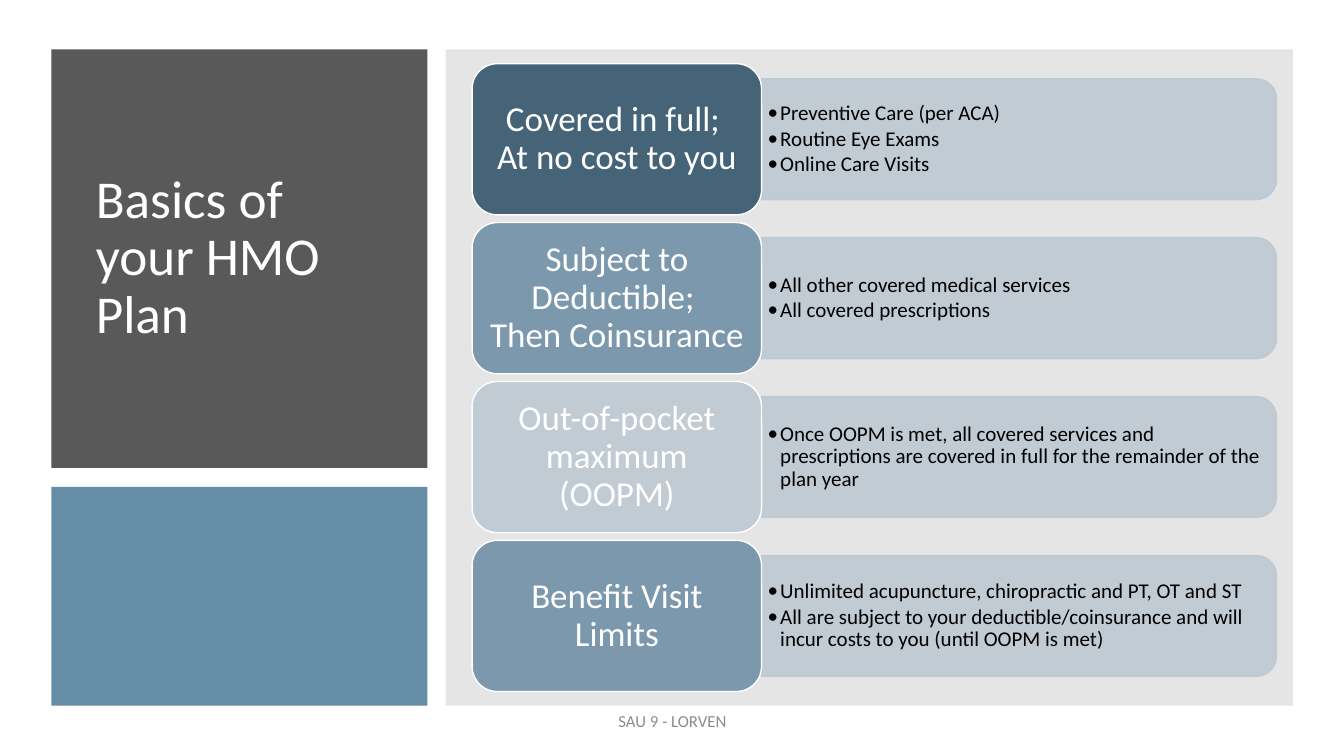
from lxml import etree
from pptx import Presentation
from pptx.dml.color import RGBColor
from pptx.enum.shapes import MSO_SHAPE
from pptx.enum.text import MSO_ANCHOR, PP_ALIGN
from pptx.oxml.ns import qn
from pptx.util import Pt

RECT = MSO_SHAPE.RECTANGLE
ROUND = MSO_SHAPE.ROUNDED_RECTANGLE
TAB = MSO_SHAPE.ROUND_2_SAME_RECTANGLE
MIDDLE = MSO_ANCHOR.MIDDLE
LEFT, CENTER = PP_ALIGN.LEFT, PP_ALIGN.CENTER
FONT = "Calibri"
WHITE, BLACK, BAR = "FFFFFF", "000000", "BDC9D2"

ROWS = [
    ("456477", ["Covered in full; ", "At no cost to you"],
     ["Preventive Care (per ACA)", "Routine Eye Exams", "Online Care Visits"]),
    ("7C98AC", ["Subject to Deductible; ", "Then Coinsurance"],
     ["All other covered medical services", "All covered prescriptions"]),
    ("C1CBD4", ["Out-of-pocket maximum", "(OOPM)"],
     ["Once OOPM is met, all covered services and prescriptions are covered "
      "in full for the remainder of the plan year"]),
    ("7C98AC", ["Benefit Visit Limits"],
     ["Unlimited acupuncture, chiropractic and PT, OT and ST",
      "All are subject to your deductible/coinsurance and will incur costs "
      "to you (until OOPM is met)"]),
]


def color(code):
    return RGBColor.from_string(code)


def add_box(slide, kind, box, fill, line=None, alpha=100):
    """Add a flat shape; alpha is the opacity of fill and line in percent."""
    shape = slide.shapes.add_shape(kind, *map(Pt, box))
    shape.shadow.inherit = False
    shape.fill.solid()
    shape.fill.fore_color.rgb = color(fill)
    if line:
        shape.line.color.rgb = color(line)
        shape.line.width = Pt(1)
    else:
        shape.line.fill.background()
    if alpha < 100:
        for tint in shape._element.spPr.iter(qn("a:srgbClr")):
            etree.SubElement(tint, qn("a:alpha"), val=str(alpha * 1000))
    return shape


def set_frame(shape, side=7.2, edge=3.6):
    frame = shape.text_frame
    frame.word_wrap = True
    frame.vertical_anchor = MIDDLE
    frame.margin_left = frame.margin_right = Pt(side)
    frame.margin_top = frame.margin_bottom = Pt(edge)
    return frame


def add_text(para, lines, size, ink, align=LEFT, space=0.9):
    """Fill a paragraph with one run per line, parted by line breaks."""
    para.alignment = align
    para.line_spacing = space
    for i, line in enumerate(lines):
        if i:
            para.add_line_break()
        run = para.add_run()
        run.text = line
        run.font.name = FONT
        run.font.size = Pt(size)
        run.font.color.rgb = color(ink)


def add_note(slide, box, text, size, ink, align, space):
    frame = set_frame(slide.shapes.add_textbox(*map(Pt, box)))
    add_text(frame.paragraphs[0], [text], size, ink, align, space)


def add_list(slide, box, items):
    frame = set_frame(slide.shapes.add_textbox(*map(Pt, box)), 4.3, 2.2)
    for i, item in enumerate(items):
        para = frame.add_paragraph() if i else frame.paragraphs[0]
        add_text(para, [item], 15, BLACK)
        para.space_after = Pt(2)
        props = para._p.get_or_add_pPr()
        props.set("marL", str(Pt(9)))
        props.set("indent", str(-Pt(9)))
        etree.SubElement(props, qn("a:buFont"), typeface=FONT)
        etree.SubElement(props, qn("a:buChar"), char="•")


def add_row(slide, box, fill, title, items):
    """Place a label on the left and its rounded bar with bullets beside it."""
    left, top, width, height = box
    label = 206.8
    long, thick = width - label, height * 0.8
    mid_x, mid_y = left + label + long / 2, top + height / 2
    bar = add_box(slide, TAB, (mid_x - thick / 2, mid_y - long / 2, thick, long),
                  BAR, BAR, 90)
    bar.rotation = 90
    add_list(slide, (left + label, mid_y - 39, long - 4.2, 78), items)
    card = add_box(slide, ROUND, (left, top, label, height), fill, WHITE)
    add_text(set_frame(card).paragraphs[0], title, 25, WHITE, CENTER)


def add_side(slide, box):
    left, top, width, height = box
    head, foot = 299, 156.2
    add_box(slide, RECT, (left, top, width, head), "595959")
    add_note(slide, (left + 24.7, top + 22.5, 224, 254),
             "Basics of your HMO Plan", 38, WHITE, LEFT, 0.9)
    add_box(slide, RECT, (left, top + height - foot, width, foot),
            "5D87A1", alpha=95)


def add_panel(slide, box):
    left, top, width, height = box
    add_box(slide, RECT, box, "808080", alpha=20)
    pitch, tall = 113.5, 108
    for i, row in enumerate(ROWS):
        add_row(slide, (left + 18.8, top + 10.2 + i * pitch, 574.6, tall), *row)


def main():
    deck = Presentation()
    deck.slide_width, deck.slide_height = Pt(960), Pt(540)
    slide = deck.slides.add_slide(deck.slide_layouts[6])
    add_side(slide, (36.7, 35.3, 268.6, 468.7))
    add_panel(slide, (318.4, 35.3, 605.4, 468.7))
    add_note(slide, (318.4, 500.5, 324, 28.8), "SAU 9 - LORVEN", 12,
             "8C8C8C", CENTER, 1.0)
    deck.save("out.pptx")


if __name__ == "__main__":
    main()
